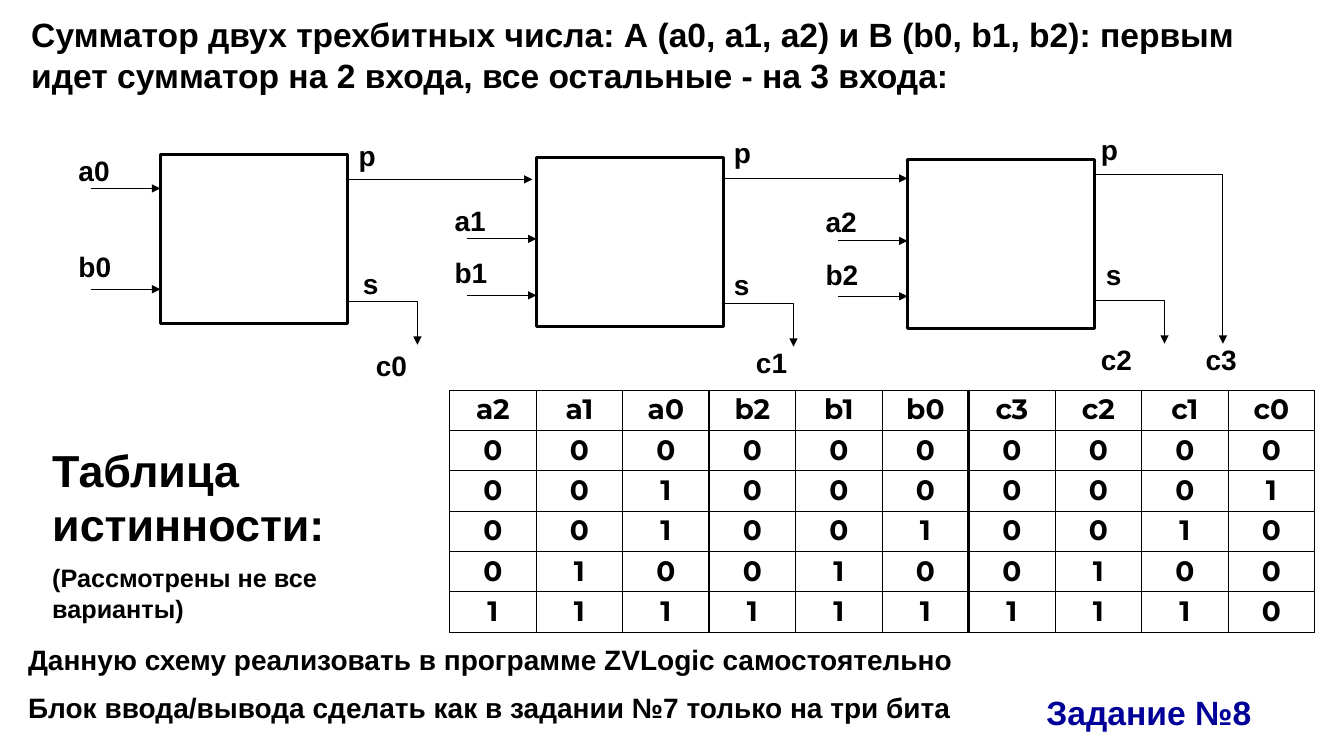
from lxml.etree import SubElement
from pptx import Presentation
from pptx.dml.color import RGBColor
from pptx.enum.shapes import MSO_CONNECTOR, MSO_SHAPE
from pptx.enum.text import MSO_ANCHOR, PP_ALIGN
from pptx.oxml.ns import qn
from pptx.util import Inches, Pt

BLACK = "000000"
WHITE = "FFFFFF"
BLUE = "000099"


def color(hex_text):
    return RGBColor.from_string(hex_text)


class AdderSlide:
    """Holds the text style and the current slide."""

    def __init__(self, presentation, font="Arial", table_font="Montserrat"):
        self.slide = presentation.slides.add_slide(presentation.slide_layouts[5])
        self.font = font
        self.table_font = table_font

    def add_run(self, paragraph, text, size, ink=BLACK, font=None):
        run = paragraph.add_run()
        run.text = text
        run.font.name = font or self.font
        run.font.size = Pt(size)
        run.font.bold = True
        run.font.color.rgb = color(ink)

    def title(self, text, left, top, width, height):
        shape = self.slide.shapes.title
        shape.left, shape.top = Inches(left), Inches(top)
        shape.width, shape.height = Inches(width), Inches(height)
        shape.text_frame.vertical_anchor = MSO_ANCHOR.TOP
        paragraph = shape.text_frame.paragraphs[0]
        paragraph.alignment = PP_ALIGN.LEFT
        self.add_run(paragraph, text, 24)

    def text(self, lines, left, top, width, height, ink=BLACK):
        """Each line is a pair of text and size, one paragraph each."""
        shape = self.slide.shapes.add_textbox(
            Inches(left), Inches(top), Inches(width), Inches(height))
        frame = shape.text_frame
        frame.word_wrap = True
        for index, (line, size) in enumerate(lines):
            paragraph = frame.add_paragraph() if index else frame.paragraphs[0]
            if index:
                paragraph.space_before = Pt(size / 2)
            self.add_run(paragraph, line, size, ink)

    def label(self, text, left, top, width=1):
        self.text([(text, 20)], left, top, width, 0.5)

    def box(self, left, top, width, height):
        shape = self.slide.shapes.add_shape(
            MSO_SHAPE.RECTANGLE, Inches(left), Inches(top), Inches(width), Inches(height))
        shape.shadow.inherit = False
        shape.fill.solid()
        shape.fill.fore_color.rgb = color(WHITE)
        shape.line.color.rgb = color(BLACK)
        shape.line.width = Pt(2.25)

    def arrow_style(self, shape):
        shape.line.color.rgb = color(BLACK)
        shape.line.width = Pt(0.75)
        SubElement(shape.line._get_or_add_ln(), qn("a:tailEnd"), type="triangle")

    def arrow(self, start, end, y):
        connector = self.slide.shapes.add_connector(
            MSO_CONNECTOR.STRAIGHT, Inches(start), Inches(y), Inches(end), Inches(y))
        self.arrow_style(connector)
        SubElement(connector._element.spPr, qn("a:effectLst"))

    def bent_arrow(self, left, top, width, height):
        """Goes right, then down."""
        corner = Inches(left + width)
        builder = self.slide.shapes.build_freeform(Inches(left), Inches(top))
        builder.add_line_segments(
            [(corner, Inches(top)), (corner, Inches(top + height))], close=False)
        shape = builder.convert_to_shape()
        shape.fill.background()
        self.arrow_style(shape)
        shape.shadow.inherit = False

    def cell_borders(self, cell, widths):
        properties = cell._tc.get_or_add_tcPr()
        for side, width in zip("LRTB", widths):
            line = SubElement(properties, qn(f"a:ln{side}"), w=str(Pt(width)))
            fill = SubElement(line, qn("a:solidFill"))
            SubElement(fill, qn("a:srgbClr"), val=BLACK)

    def table(self, rows, left, top, width, height, group):
        """A thicker line parts every group of columns."""
        columns = len(rows[0])
        table = self.slide.shapes.add_table(
            len(rows), columns, Inches(left), Inches(top), Inches(width), Inches(height)).table
        table.first_row = table.horz_banding = False
        for row_index, row in enumerate(rows):
            for column, value in enumerate(row):
                cell = table.cell(row_index, column)
                left_width = 2 if column in (group, 2 * group) else 1
                right_width = 2 if column + 1 in (group, 2 * group) else 1
                self.cell_borders(cell, (left_width, right_width, 1, 1))
                cell.fill.background()
                paragraph = cell.text_frame.paragraphs[0]
                paragraph.alignment = PP_ALIGN.CENTER
                paragraph.line_spacing = 0.9
                self.add_run(paragraph, value, 20, font=self.table_font)


BOX_WIDTH, BOX_HEIGHT = 1.86, 1.68

# Left and top of the box; inputs as name, label top, arrow height;
# labels p, s and the sum as left and top; height of the sum output
ADDERS = [
    (1.59, 1.53, [("a0", 1.47, 1.87), ("b0", 2.43, 2.87)],
     (3.46, 1.32), (3.5, 2.59), ("c0", 3.63, 3.41), 2.99),
    (5.32, 1.56, [("a1", 1.97, 2.37), ("b1", 2.49, 2.93)],
     (7.18, 1.3), (7.18, 2.6), ("c1", 7.4, 3.38), 3.01),
    (9, 1.58, [("a2", 1.98, 2.39), ("b2", 2.51, 2.94)],
     (10.82, 1.27), (10.87, 2.51), ("c2", 10.82, 3.35), 2.98),
]

TRUTH_ROWS = [
    "a2 a1 a0 b2 b1 b0 c3 c2 c1 c0".split(),
    *map(list, ["0000000000", "0010000001", "0010010010", "0100100100", "1111111110"]),
]


def main():
    presentation = Presentation()
    presentation.slide_width = Inches(13.33)
    presentation.slide_height = Inches(7.5)
    page = AdderSlide(presentation)

    page.title("Сумматор двух трехбитных числа: А (а0, а1, а2) и В (b0, b1, b2): первым "
               "идет сумматор на 2 входа, все остальные - на 3 входа:", 0.21, 0.09, 12.92, 0.91)

    # Adders with their inputs and sums
    for left, top, inputs, carry_label, sum_label, result, sum_y in ADDERS:
        page.box(left, top, BOX_WIDTH, BOX_HEIGHT)
        for name, label_top, arrow_y in inputs:
            page.arrow(left - 0.69, left, arrow_y)
            page.label(name, left - 0.91, label_top)
        page.label("p", *carry_label, width=0.74)
        page.label("s", *sum_label, width=0.74)
        page.bent_arrow(left + BOX_WIDTH, sum_y, 0.69, 0.43)
        page.label(*result)

    # Carries
    page.arrow(3.46, 5.28, 1.78)
    page.arrow(7.18, 9, 1.77)
    page.bent_arrow(10.87, 1.73, 1.26, 1.68)
    page.label("c3", 11.86, 3.35)

    # Truth table
    page.table(TRUTH_ROWS, 4.46, 3.87, 8.58, 2.4, group=3)
    page.text([("Таблица истинности:", 32), ("(Рассмотрены не все варианты)", 18)],
              0.42, 4.34, 3.94, 1.92)

    # Task
    page.text([("Данную схему реализовать в программе ZVLogic самостоятельно", 20),
               ("Блок ввода/вывода сделать как в задании №7 только на три бита", 20)],
              0.18, 6.33, 9.66, 0.93)
    page.text([("Задание №8", 24)], 10.28, 6.82, 2.29, 0.5, BLUE)

    presentation.save("out.pptx")


if __name__ == "__main__":
    main()
